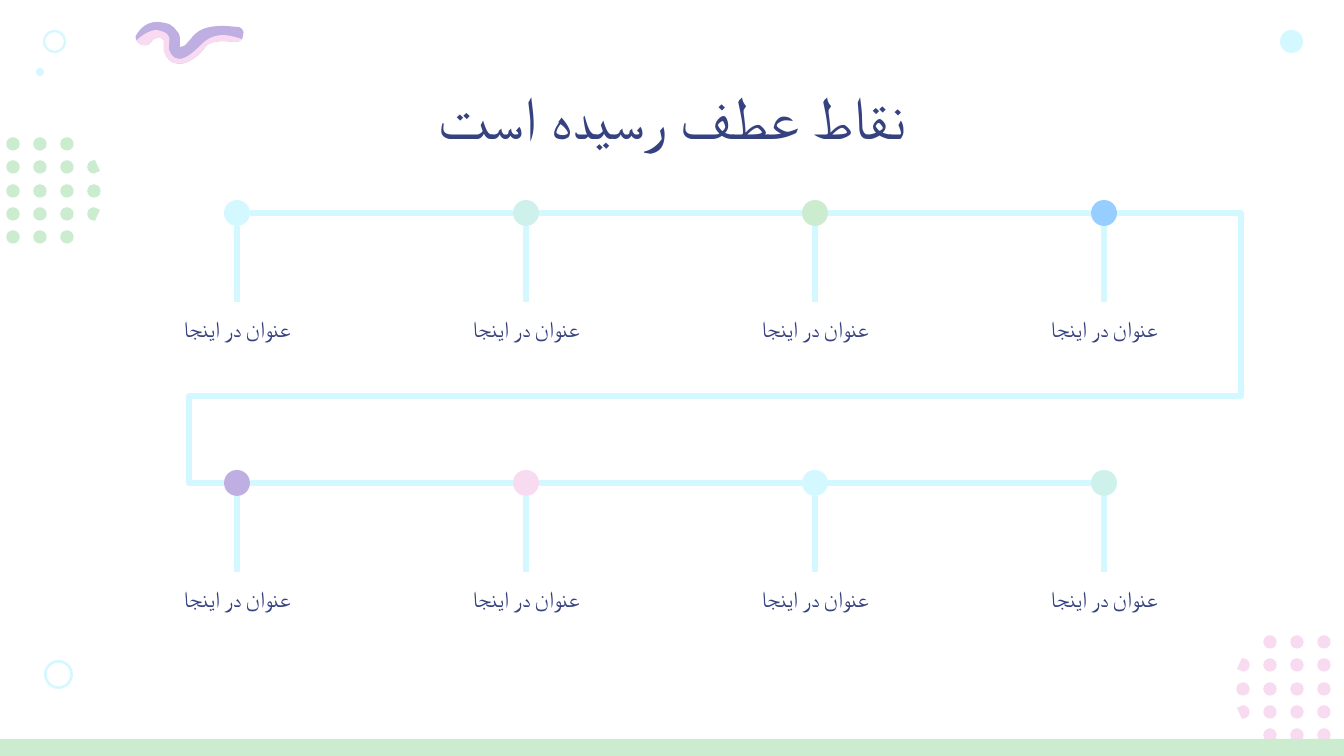
from lxml import etree
from pptx import Presentation
from pptx import util as u
from pptx.dml.color import RGBColor
from pptx.enum import shapes, text
from pptx.oxml.ns import qn

PX = 914400 / 134.4
COLORS = {
    "ink": "36427F",
    "sky": "D4F8FF",
    "mint": "CEF1EB",
    "green": "CBECCF",
    "blue": "96CFFF",
    "violet": "BFAEE2",
    "pink": "F8DBF1",
}
HALF_TURN, QUARTER_TURN = 10800000, 5400000

# Squiggle edges: six numbers make a Bezier curve, two make a straight line.
LOWER_EDGE = [
    (8, 25, 12, 25, 15, 21), (16, 18, 19, 17, 21, 17), (23, 17, 24, 17, 25, 17),
    (27, 18, 27, 18, 28, 19), (28, 19, 28, 21, 28, 21), (28, 22, 28, 25, 28, 29),
    (29, 34, 32, 39, 36, 41), (37, 42, 37, 42, 39, 42), (48, 45, 59, 38, 66, 30),
    (67, 29), (71, 23, 75, 18, 99, 21), (101, 21, 103, 21, 106, 18),
]
UPPER_EDGE = [
    (106, 18, 107, 17, 107, 14), (109, 11, 106, 7, 103, 6), (101, 6),
    (70, 2, 60, 10, 54, 19), (52, 21), (49, 25, 47, 26, 44, 26),
    (44, 23, 44, 22, 44, 21), (44, 15, 44, 13, 40, 9), (39, 7, 36, 5, 33, 3),
    (29, 2, 25, 1, 21, 1), (13, 1, 6, 5, 1, 13), (-2, 15, 0, 21, 4, 23),
]
MIDDLE_EDGE = [
    (103, 18, 83, 7, 67, 22), (58, 31, 47, 41, 40, 37), (39, 37),
    (25, 26, 41, 18, 28, 11), (25, 10), (17, 6, 5, 15, 1, 19), (1, 21, 2, 22, 4, 23),
]


def px(value):
    return u.Emu(round(value * PX))


def rgb(color):
    return RGBColor.from_string(COLORS[color])


def paint(shape, color):
    shape.shadow.inherit = False
    shape.fill.solid()
    shape.fill.fore_color.rgb = rgb(color)
    shape.line.fill.background()


def add_preset(slide, preset, left, top, width, height, color):
    shape = slide.shapes.add_shape(preset, px(left), px(top), px(width), px(height))
    paint(shape, color)
    return shape


def add_circle(slide, left, top, size, color):
    return add_preset(slide, shapes.MSO_SHAPE.OVAL, left, top, size, size, color)


def add_ring(slide, left, top, size):
    ring = add_preset(slide, shapes.MSO_SHAPE.DONUT, left, top, size, size, "sky")
    ring.adjustments[0] = 0.09


def add_outline(slide, left, top, width, height, contours, color):
    """Fill contours made of a start point and edges; a dict is an arc."""
    builder = slide.shapes.build_freeform(px(left), px(top), scale=1.0)
    builder.add_line_segments([(px(left + width), px(top + height))])
    shape = builder.convert_to_shape()
    outline = next(shape._element.iter(qn("a:path")))
    for command in list(outline):
        outline.remove(command)

    def draw(command, numbers):
        node = etree.SubElement(outline, qn(f"a:{command}"))
        for x, y in zip(numbers[::2], numbers[1::2]):
            etree.SubElement(node, qn("a:pt"), x=str(px(x)), y=str(px(y)))

    for start, edges in contours:
        draw("moveTo", start)
        for edge in edges:
            if isinstance(edge, dict):
                etree.SubElement(outline, qn("a:arcTo"), edge)
            else:
                draw("lnTo" if len(edge) == 2 else "cubicBezTo", edge)
        draw("close", ())
    paint(shape, color)


def add_squiggle(slide, left, top):
    for edge, color in ((UPPER_EDGE, "violet"), (MIDDLE_EDGE, "pink")):
        add_outline(slide, left, top, 108, 43, [((4, 23), LOWER_EDGE + edge)], color)


def half_circle(radius, start, sweep):
    size = str(px(radius))
    return {"wR": size, "hR": size, "stAng": str(start), "swAng": str(sweep)}


def add_dot_panel(slide, left, top, color, mirrored=False):
    """Three columns of dots and a shorter, clipped one on the inner edge."""
    radius, width, height = 6.7, 95, 107
    side = -1 if mirrored else 1
    sweep = side * HALF_TURN
    first = half_circle(radius, QUARTER_TURN, sweep)
    second = half_circle(radius, 3 * QUARTER_TURN, sweep)
    chips = {1: [(1, -7), (6, 4)], 3: [(6, -4), (1, 7)]}
    contours = []
    for row, y in enumerate((7, 30, 54, 77, 100)):
        for column in range(3 if row in (0, 4) else 4):
            x = 7 + 27 * column
            if mirrored:
                x = width - x
            if column == 3 and row in chips:
                rest = [(x + side * dx, y + dy) for dx, dy in chips[row]]
            else:
                rest = [second]
            contours.append(((x, y + radius), [first] + rest))
    add_outline(slide, left, top, width, height, contours, color)


def add_decor(slide, width, height):
    add_dot_panel(slide, width - 108, 635, "pink", mirrored=True)
    add_squiggle(slide, 136, 21)
    add_preset(slide, shapes.MSO_SHAPE.RECTANGLE, 0, height - 17, width, 17, "green")
    add_ring(slide, 44, 660, 29)
    add_ring(slide, 43, 30, 23)
    add_circle(slide, 36, 68, 8, "sky")
    add_circle(slide, width - 64, 30, 23, "sky")
    add_dot_panel(slide, 6, 137, "green")


def add_text(slide, left, top, width, height, words, size, font):
    box = slide.shapes.add_textbox(px(left), px(top), px(width), px(height))
    frame = box.text_frame
    frame.word_wrap = True
    frame.vertical_anchor = text.MSO_ANCHOR.TOP
    for side in ("left", "top", "right", "bottom"):
        setattr(frame, f"margin_{side}", u.Inches(0.1))
    paragraph = frame.paragraphs[0]
    paragraph.alignment = text.PP_ALIGN.CENTER
    run = paragraph.add_run()
    run.text = words
    run.font.size = u.Pt(size)
    run.font.name = font
    run.font.color.rgb = rgb("ink")
    etree.SubElement(run.font._element, qn("a:cs"), typeface=font)
    return box


def add_link(slide, x1, y1, x2, y2, kind=shapes.MSO_CONNECTOR.STRAIGHT):
    link = slide.shapes.add_connector(kind, px(x1), px(y1), px(x2), px(y2))
    link.line.color.rgb = rgb("sky")
    link.line.width = u.Pt(3)
    etree.SubElement(link._element.spPr, qn("a:effectLst"))
    return link


def add_turn(slide, x1, y1, x2, y2):
    """Lead the timeline round the right edge and back to the next row."""
    turn = add_link(slide, x1, y1, x2, y2, shapes.MSO_CONNECTOR.ELBOW)
    geometry = turn._element.spPr.find(qn("a:prstGeom"))
    geometry.set("prst", "bentConnector5")
    guides = geometry.find(qn("a:avLst"))
    for number, share in enumerate((-13900, 67800, 103900), 1):
        etree.SubElement(guides, qn("a:gd"), name=f"adj{number}", fmla=f"val {share}")


def add_milestones(slide, left, top, pitch, marker, milestones):
    """Place one timeline row; left and top are those of its first marker."""
    label_width, label_height, drop = 266, 91, 102
    middle = top + marker / 2
    for number, (label, color) in enumerate(milestones):
        x = left + number * pitch
        center = x + marker / 2
        add_circle(slide, x, top, marker, color)
        caption = add_text(slide, center - label_width / 2, top + drop,
                           label_width, label_height, label, 12, "Manrope")
        stem = add_link(slide, center, top + marker, center, top + drop)
        stem.end_connect(caption, 0)
        if number:
            add_link(slide, x - pitch + marker, middle, x, middle)


def add_timeline(slide, left, top, row_gap, rows):
    marker, pitch = 26, 289
    for number, colors in enumerate(rows):
        milestones = [("عنوان در اینجا", color) for color in colors]
        add_milestones(slide, left, top + number * row_gap, pitch, marker, milestones)
    middle = top + marker / 2
    add_turn(slide, left + 3 * pitch + marker, middle, left, middle + row_gap)


def main():
    width, height = 1344, 756
    deck = Presentation()
    deck.slide_width, deck.slide_height = px(width), px(height)
    slide = deck.slides.add_slide(deck.slide_layouts[6])
    add_decor(slide, width, height)
    add_text(slide, 106, 66, 1133, 84, "نقاط عطف رسیده است", 32, "Arial")
    add_timeline(slide, 224, 200, 270, [
        ("sky", "mint", "green", "blue"),
        ("violet", "pink", "sky", "mint"),
    ])
    deck.save("out.pptx")


if __name__ == "__main__":
    main()
